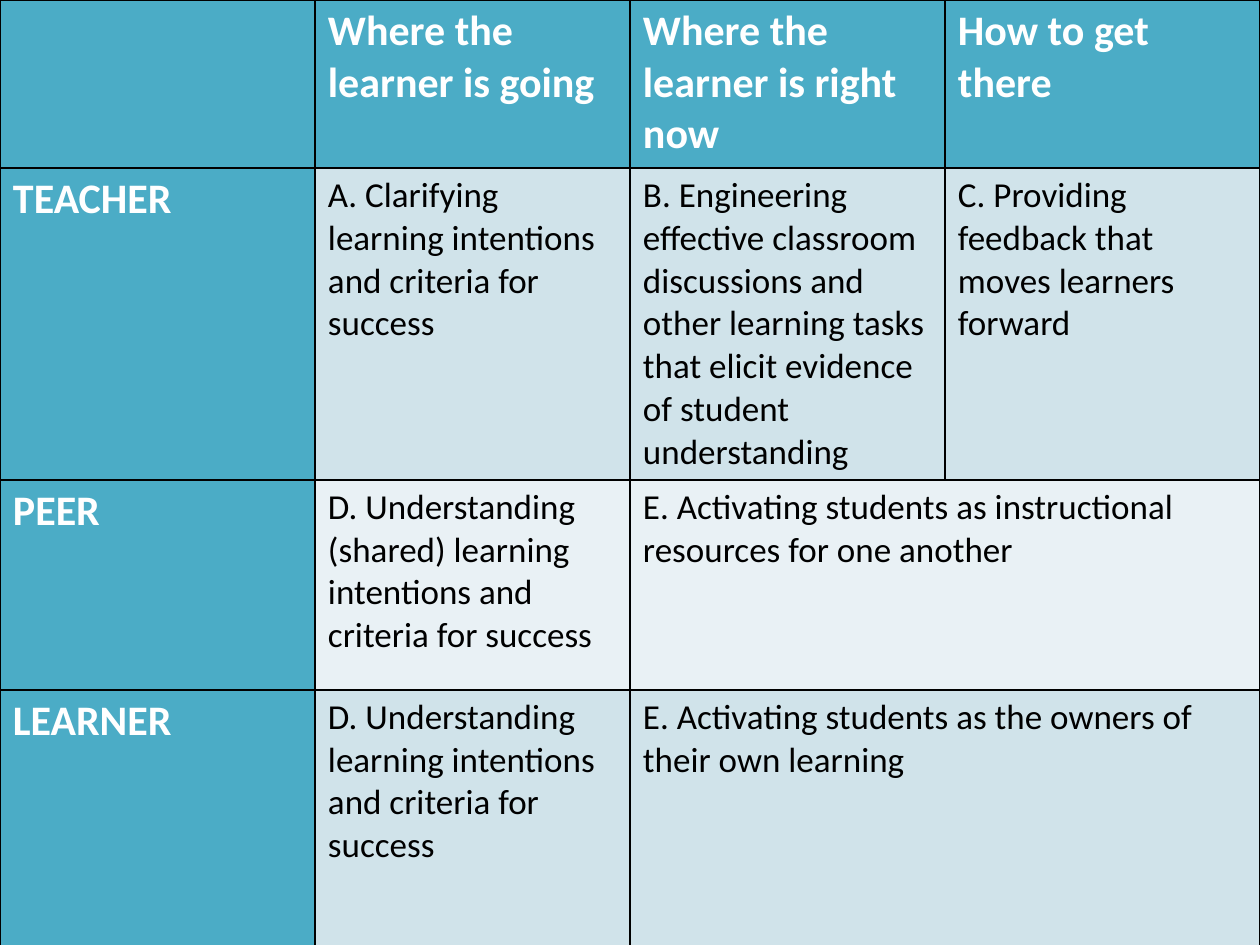
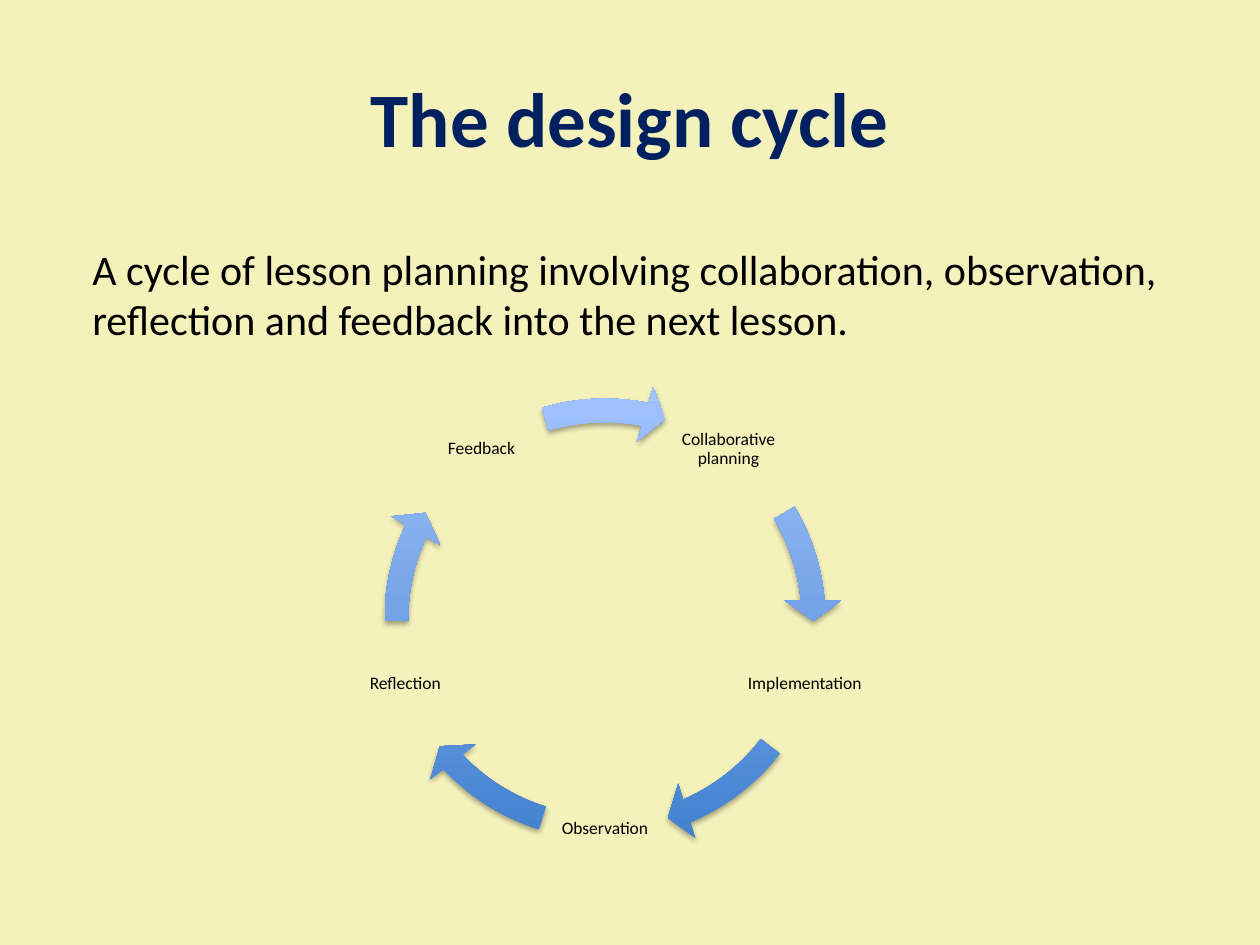
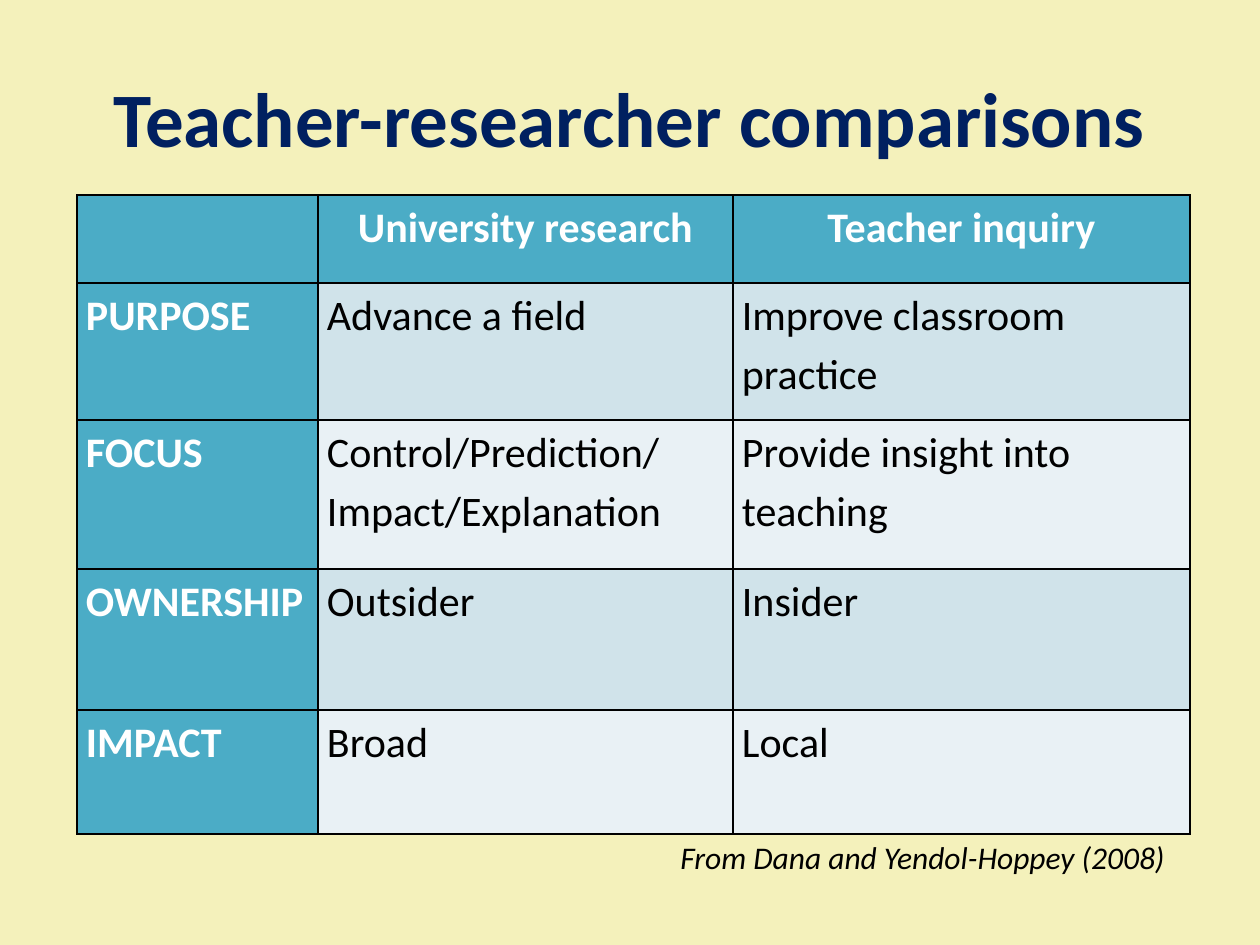
"""Build three slides on formative assessment, the design cycle and teacher inquiry."""
import math

import pptx
import pptx.dml.color
import pptx.enum.shapes
import pptx.enum.text
import pptx.oxml
import pptx.oxml.ns
import pptx.util

COLORS = {"page": "F4F1BB", "title": "002060", "text": "000000", "white": "FFFFFF",
          "head": "4BACC6", "band": "D0E3EA", "light": "E9F1F5",
          "arrow_low": "3F7FCE", "arrow_high": "A4C4FF"}
FONT = "Calibri"
SCALE = pptx.util.Inches(1) / 126
ALIGN = pptx.enum.text.PP_ALIGN
MIDDLE = pptx.enum.text.MSO_ANCHOR.MIDDLE
SHAPE = pptx.enum.shapes.MSO_SHAPE

TITLE_BOX = (63, 38, 1134, 157)
STRATEGIES = {
    "at": (0, 0),
    "cols": [315] * 4,
    "rows": [168, 304, 210, 271],
    "margins": (13, 6, 13, 6),
    "body_size": 20,
    "head_format": {},
    "format": {},
    "cells": [
        ("", "Where the learner is going", "Where the learner is right now", "How to get there"),
        ("TEACHER", "A. Clarifying learning intentions and criteria for success",
         "B. Engineering effective classroom discussions and other learning tasks "
         "that elicit evidence of student understanding",
         "C. Providing feedback that moves learners forward"),
        ("PEER", "D. Understanding (shared) learning intentions and criteria for success",
         "E. Activating students as instructional resources for one another", None),
        ("LEARNER", "D. Understanding learning intentions and criteria for success",
         "E. Activating students as the owners of their own learning", None),
    ],
}
COMPARISON = {
    "at": (77, 195),
    "cols": [241, 415, 457],
    "rows": [88, 137, 149, 141, 124],
    "margins": (9, 0, 9, 0),
    "body_size": 24,
    "head_format": {"alignment": ALIGN.CENTER},
    "format": {"line_spacing": 1.15},
    "cells": [
        ("", "University research", "Teacher inquiry"),
        ("PURPOSE", "Advance a field", "Improve classroom practice"),
        ("FOCUS", "Control/Prediction/ Impact/Explanation", "Provide insight into teaching"),
        ("OWNERSHIP", "Outsider", "Insider"),
        ("IMPACT", "Broad", "Local"),
    ],
}
CYCLE_TITLE = "The design cycle"
CYCLE_INTRO = ("A cycle of lesson planning involving collaboration, observation, "
               "reflection and feedback into the next lesson.")
CYCLE_STEPS = [("Collaborative planning", 329.4, 354.9), ("Implementation", 37.6, 66.9),
               ("Observation", 107.5, 136.8), ("Reflection", 179.5, 205),
               ("Feedback", 253.3, 281.1)]
CYCLE = {"center": (605, 619), "radius": 210, "label": 126, "ring": 474}
COMPARISON_TITLE = "Teacher-researcher comparisons"
COMPARISON_CREDIT = "From Dana and Yendol-Hoppey (2008)"


def px(*values):
    return [round(v * SCALE) for v in values]


def rgb(name):
    return pptx.dml.color.RGBColor.from_string(COLORS[name])


def set_all(target, values):
    for name, value in values.items():
        setattr(target, name, value)


def write(tf, text, size, color="text", para=None, **font):
    p = tf.paragraphs[0]
    set_all(p, para or {})
    r = p.add_run()
    r.text = text
    set_all(r.font, {"name": FONT, "size": pptx.util.Pt(size), **font})
    r.font.color.rgb = rgb(color)


def add_text(shapes, box, text, size, color="text", para=None, frame=None, **font):
    tf = shapes.add_textbox(*px(*box)).text_frame
    set_all(tf, {"word_wrap": True, **(frame or {})})
    write(tf, text, size, color, para, **font)


def add_title(slide, text):
    add_text(slide.shapes, TITLE_BOX, text, 44, "title", {"alignment": ALIGN.CENTER},
             {"vertical_anchor": MIDDLE}, bold=True)


def margins(values):
    sides = ("margin_left", "margin_top", "margin_right", "margin_bottom")
    return dict(zip(sides, px(*values)))


def add_borders(cell):
    tc_pr = cell._tc.get_or_add_tcPr()
    for side in "LRTB":
        tc_pr.append(pptx.oxml.parse_xml(
            f'<a:ln{side} {pptx.oxml.ns.nsdecls("a")} w="12700"><a:solidFill>'
            f'<a:srgbClr val="{COLORS["text"]}"/></a:solidFill></a:ln{side}>'))


def add_table(slide, data):
    cols, rows = data["cols"], data["rows"]
    box = px(*data["at"], sum(cols), sum(rows))
    table = slide.shapes.add_table(len(rows), len(cols), *box).table
    table.horz_banding = False
    for column, width in zip(table.columns, px(*cols)):
        column.width = width
    for row, height in zip(table.rows, px(*rows)):
        row.height = height
    for i, texts in enumerate(data["cells"]):
        for j, text in enumerate(texts):
            cell = table.cell(i, j)
            head = i == 0 or j == 0
            add_borders(cell)
            cell.fill.solid()
            cell.fill.fore_color.rgb = rgb("head" if head else "band" if i % 2 else "light")
            set_all(cell, margins(data["margins"]))
            para = {**data["format"], **(data["head_format"] if i == 0 else {})}
            if text is None:
                table.cell(i, j - 1).merge(cell)
            elif text:
                write(cell.text_frame, text, 24 if head else data["body_size"],
                      "white" if head else "text", para, bold=head)


def add_arrow(shapes, start, end):
    cx, cy = CYCLE["center"]
    ring = CYCLE["ring"]
    sp = shapes.add_shape(SHAPE.CIRCULAR_ARROW, *px(cx - ring / 2, cy - ring / 2, ring, ring))
    for i, value in enumerate((0.05, 5.6 * 0.6, end * 0.6, start * 0.6, 0.06)):
        sp.adjustments[i] = value
    sp.line.fill.background()
    sp.fill.gradient()
    sp.fill.gradient_angle = 90
    for stop, name in zip(sp.fill.gradient_stops, ("arrow_low", "arrow_high")):
        stop.color.rgb = rgb(name)
    sp.shadow.inherit = False
    effects = sp._element.spPr.find(pptx.oxml.ns.qn("a:effectLst"))
    effects.append(pptx.oxml.parse_xml(
        f'<a:outerShdw {pptx.oxml.ns.nsdecls("a")} blurRad="40000" dist="23000" dir="5400000" '
        f'rotWithShape="0"><a:srgbClr val="{COLORS["text"]}"><a:alpha val="35000"/>'
        '</a:srgbClr></a:outerShdw>'))


def add_cycle(slide):
    shapes = slide.shapes.add_group_shape().shapes
    cx, cy = CYCLE["center"]
    size = CYCLE["label"]
    turn = 2 * math.pi / len(CYCLE_STEPS)
    for i, (label, start, end) in enumerate(CYCLE_STEPS):
        angle = turn * (i + 0.5)
        x = cx + CYCLE["radius"] * math.sin(angle) - size / 2
        y = cy - CYCLE["radius"] * math.cos(angle) - size / 2
        add_text(shapes, (x, y, size, size), label, 10,
                 para={"alignment": ALIGN.CENTER, "line_spacing": 0.9},
                 frame={"vertical_anchor": MIDDLE, **margins((1, 1, 1, 1))})
        add_arrow(shapes, start, end)


def main():
    prs = pptx.Presentation()
    prs.slide_width, prs.slide_height = px(1260, 945)
    background = prs.slide_master.background.fill
    background.solid()
    background.fore_color.rgb = rgb("page")
    strategies, cycle, comparison = [prs.slides.add_slide(prs.slide_layouts[6]) for _ in range(3)]

    add_table(strategies, STRATEGIES)

    add_title(cycle, CYCLE_TITLE)
    add_cycle(cycle)
    add_text(cycle.shapes, (80, 237, 1103, 115), CYCLE_INTRO, 24)

    add_title(comparison, COMPARISON_TITLE)
    add_table(comparison, COMPARISON)
    add_text(comparison.shapes, (668, 832, 523, 50), COMPARISON_CREDIT, 18,
             frame={"word_wrap": False}, italic=True)
    prs.save("out.pptx")


if __name__ == "__main__":
    main()
